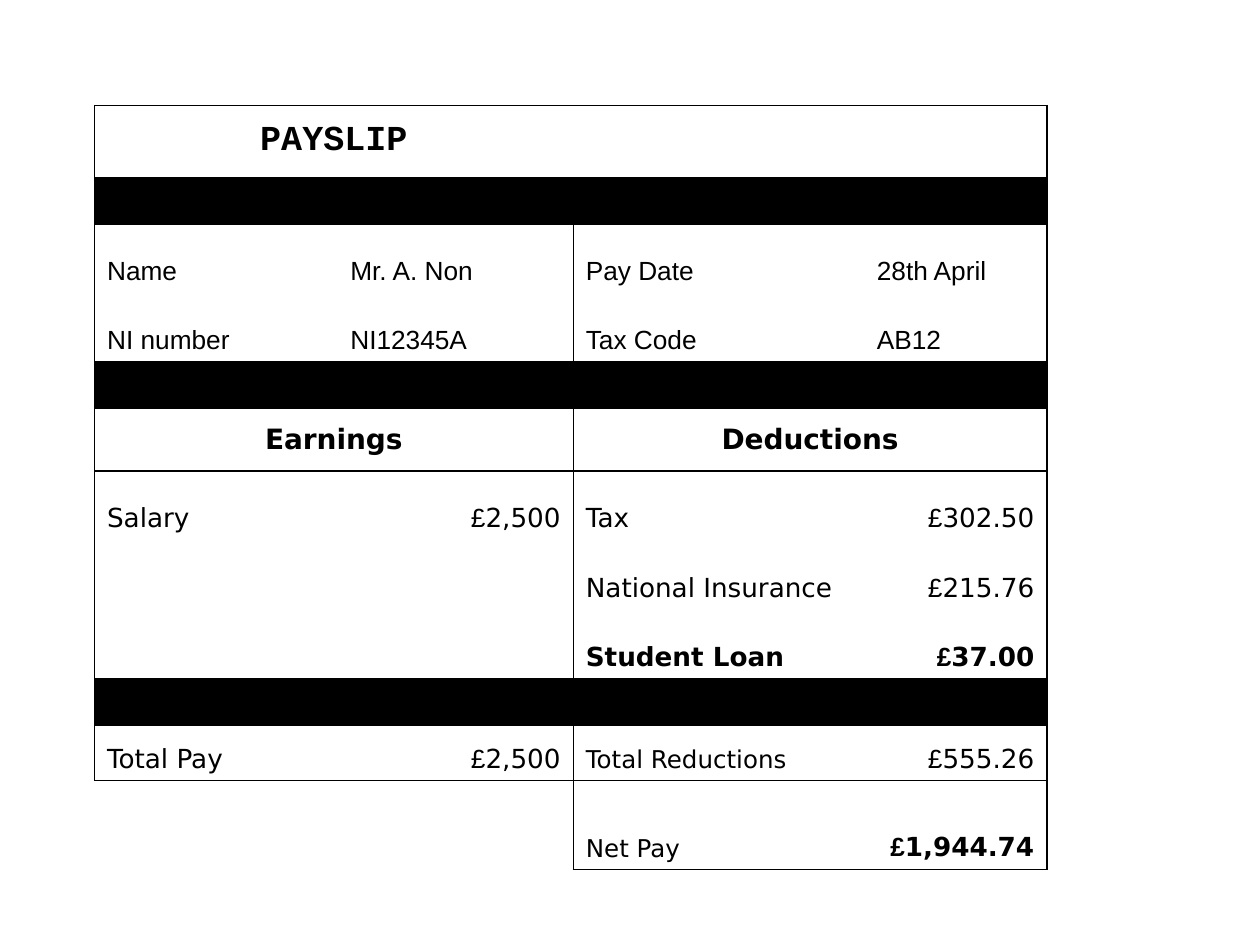
from lxml.etree import SubElement
from pptx import Presentation
from pptx.dml.color import RGBColor
from pptx.enum.text import MSO_ANCHOR, PP_ALIGN
from pptx.oxml.ns import qn
from pptx.util import Pt

BLACK = "000000"
BODY_FONT = "DejaVu Sans"
COLUMN_WIDTHS = [139, 134.6, 166.3, 104.4]
BAND_HEIGHT = 26.6
ROW_HEIGHTS = [41, BAND_HEIGHT, 39.3, 39.3, BAND_HEIGHT, 36,
               39.6, 39.6, 39.6, BAND_HEIGHT, 31.6, 50.6]

# Cells with the same letter share one outlined panel; a dot lies outside.
PANELS = ["AAAA", "BBBB", "CCDD", "CCDD", "EEEE", "FFGG",
          "HHII", "HHII", "HHII", "JJJJ", "KKLL", "..MM"]
BANDS = "BEJ"

HEADINGS = [  # row, column, text, font, size
    (0, 0, "PAYSLIP", "Courier New", 20),
    (5, 0, "Earnings", BODY_FONT, 16),
    (5, 2, "Deductions", BODY_FONT, 16),
]
EMPLOYEE_DETAILS = [
    (2, ["Name", "Mr. A. Non", "Pay Date", "28th April"]),
    (3, ["NI number", "NI12345A", "Tax Code", "AB12"]),
]
AMOUNTS = [  # row, column, label, label size, amount, label bold, amount bold
    (6, 0, "Salary", 15, "2,500", False, False),
    (6, 2, "Tax", 15, "302.50", False, False),
    (7, 2, "National Insurance", 15, "215.76", False, False),
    (8, 2, "Student Loan", 15, "37.00", True, True),
    (10, 0, "Total Pay", 15, "2,500", False, False),
    (10, 2, "Total Reductions", 14, "555.26", False, False),
    (11, 2, "Net Pay", 14, "1,944.74", False, True),
]


def color(hex_value):
    return RGBColor.from_string(hex_value)


def panel_at(row, column):
    inside = 0 <= row < len(PANELS) and 0 <= column < len(PANELS[0])
    return PANELS[row][column] if inside else "."


def set_borders(cell, row, column):
    """Draw each cell edge that separates two different panels."""
    span = cell.span_width if cell.is_merge_origin else 1
    neighbours = {
        "a:lnL": (row, column - 1),
        "a:lnR": (row, column + span),
        "a:lnT": (row - 1, column),
        "a:lnB": (row + 1, column),
    }
    properties = cell._tc.get_or_add_tcPr()
    for tag, neighbour in neighbours.items():
        line = SubElement(properties, qn(tag), w=str(Pt(1)))
        if panel_at(row, column) == panel_at(*neighbour):
            SubElement(line, qn("a:noFill"))
        else:
            fill = SubElement(line, qn("a:solidFill"))
            SubElement(fill, qn("a:srgbClr"), val=BLACK)


def style_cell(cell, row, column):
    set_borders(cell, row, column)
    if panel_at(row, column) in BANDS:
        cell.fill.solid()
        cell.fill.fore_color.rgb = color(BLACK)
    else:
        cell.fill.background()
    if not cell.text:
        cell.margin_top = cell.margin_bottom = 0


def write_text(cell, text, size, font=BODY_FONT, bold=False,
               align=PP_ALIGN.LEFT, anchor=MSO_ANCHOR.BOTTOM):
    cell.vertical_anchor = anchor
    paragraph = cell.text_frame.paragraphs[0]
    paragraph.alignment = align
    paragraph.font.size = Pt(size)
    paragraph.font.bold = bold
    paragraph.font.name = font
    paragraph.font.color.rgb = color(BLACK)
    paragraph.add_run().text = text
    return paragraph


def write_amount(cell, amount, bold):
    """Write a right-aligned sum whose pound sign has its own font."""
    paragraph = write_text(cell, "£", 15, bold=bold, align=PP_ALIGN.RIGHT)
    paragraph.runs[0].font.name = "Arial"
    paragraph.add_run().text = amount


def add_payslip(slide, left, top):
    frame = slide.shapes.add_table(
        len(ROW_HEIGHTS), len(COLUMN_WIDTHS), Pt(left), Pt(top),
        Pt(sum(COLUMN_WIDTHS)), Pt(sum(ROW_HEIGHTS)))
    table = frame.table
    table.first_row = table.horz_banding = False
    for table_column, width in zip(table.columns, COLUMN_WIDTHS):
        table_column.width = Pt(width)
    for table_row, height in zip(table.rows, ROW_HEIGHTS):
        table_row.height = Pt(height)

    for row, column, text, font, size in HEADINGS:
        cell = table.cell(row, column)
        cell.merge(table.cell(row, column + 1))
        write_text(cell, text, size, font, True, PP_ALIGN.CENTER, MSO_ANCHOR.MIDDLE)
    for row, details in EMPLOYEE_DETAILS:
        for column, text in enumerate(details):
            write_text(table.cell(row, column), text, 15, "Arial")
    for row, column, label, size, amount, label_bold, amount_bold in AMOUNTS:
        write_text(table.cell(row, column), label, size, bold=label_bold)
        write_amount(table.cell(row, column + 1), amount, amount_bold)

    for row in range(len(ROW_HEIGHTS)):
        for column in range(len(COLUMN_WIDTHS)):
            style_cell(table.cell(row, column), row, column)


def main():
    presentation = Presentation()
    presentation.slide_width, presentation.slide_height = Pt(720), Pt(540)
    slide = presentation.slides.add_slide(presentation.slide_layouts[6])
    add_payslip(slide, left=54, top=60.4)
    presentation.save("out.pptx")


if __name__ == "__main__":
    main()
